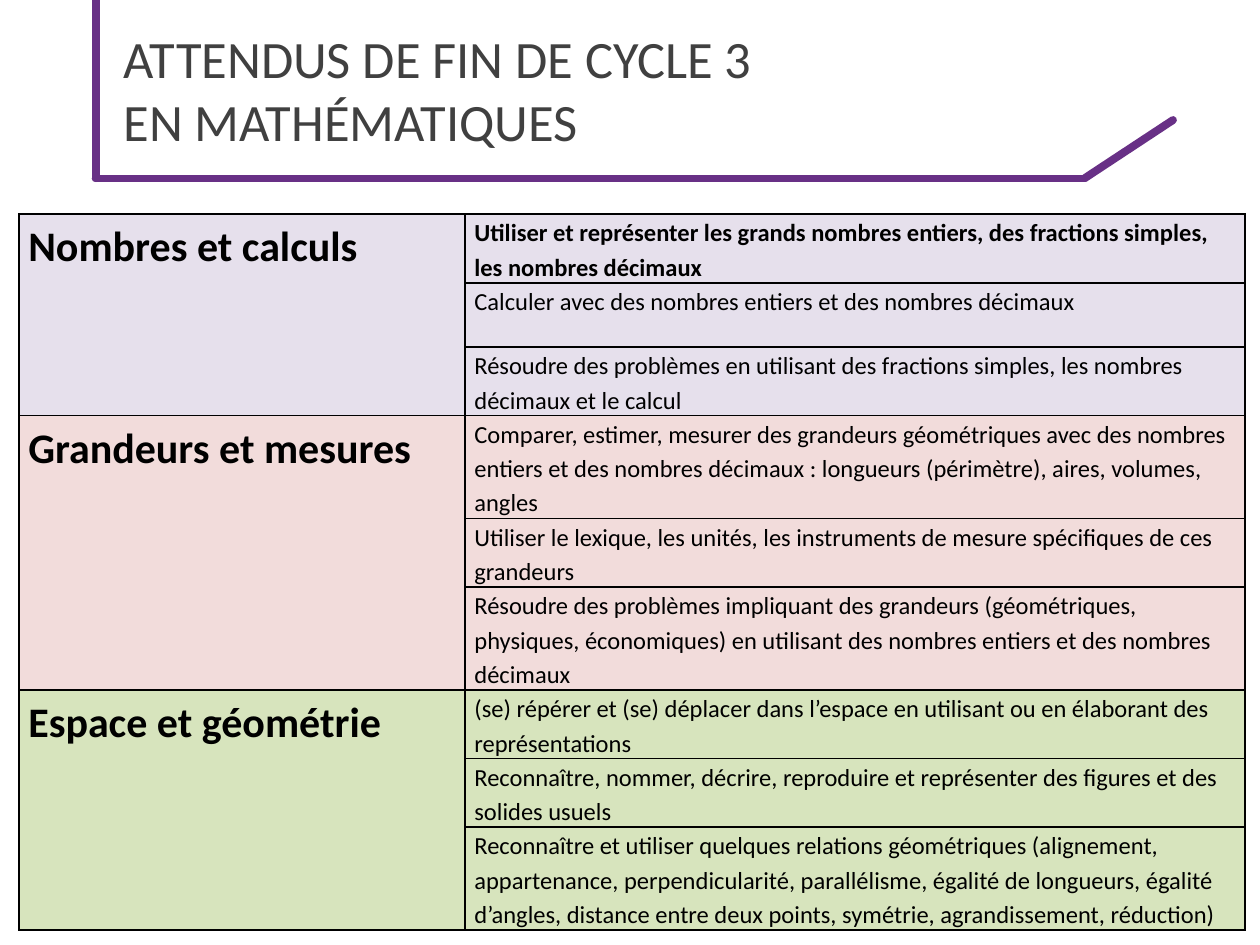
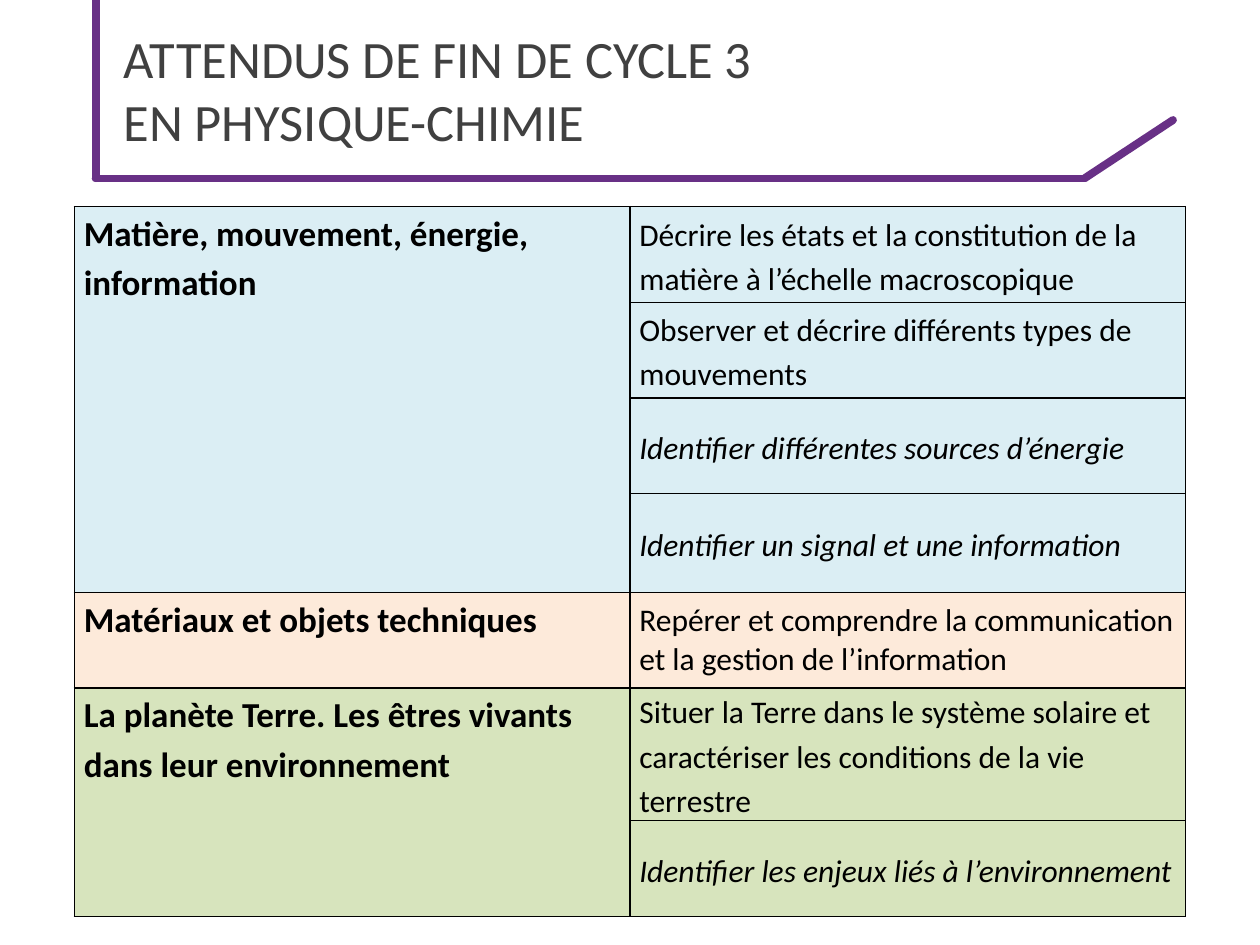
from dataclasses import dataclass

import pptx
import pptx.dml.color
import pptx.enum.shapes
import pptx.enum.text
import pptx.oxml
import pptx.oxml.ns
import pptx.util

Pt = pptx.util.Pt
MIDDLE = pptx.enum.text.MSO_ANCHOR.MIDDLE
TOP = pptx.enum.text.MSO_ANCHOR.TOP

FONT = "Calibri"
COLORS = {
    "frame": "683086",
    "title": "404040",
    "text": "000000",
    "lilac": "E6E0EC",
    "rose": "F2DCDB",
    "green": "D7E4BD",
    "blue": "DBEEF4",
    "peach": "FDEADA",
}


@dataclass
class Outcome:
    text: str
    bold: bool = False
    italic: bool = False
    spacing: float = 1.15


@dataclass
class TableStyle:
    left: float
    top: float
    widths: tuple
    row_heights: list
    theme_size: int
    outcome_size: int
    outcome_anchor: object


# Each theme: name, fill, expected outcomes
MATHS = [
    ("Nombres et calculs", "lilac", [
        Outcome("Utiliser et représenter les grands nombres entiers, des fractions "
                "simples, les nombres décimaux", bold=True),
        Outcome("Calculer avec des nombres entiers et des nombres décimaux"),
        Outcome("Résoudre des problèmes en utilisant des fractions simples, "
                "les nombres décimaux et le calcul"),
    ]),
    ("Grandeurs et mesures", "rose", [
        Outcome("Comparer, estimer, mesurer des grandeurs géométriques avec des nombres "
                "entiers et des nombres décimaux : longueurs (périmètre), aires, "
                "volumes, angles"),
        Outcome("Utiliser le lexique, les unités, les instruments de mesure "
                "spécifiques de ces grandeurs"),
        Outcome("Résoudre des problèmes impliquant des grandeurs (géométriques, "
                "physiques, économiques) en utilisant des nombres entiers et des "
                "nombres décimaux"),
    ]),
    ("Espace et géométrie", "green", [
        Outcome("(se) répérer et (se) déplacer dans l’espace en utilisant ou en "
                "élaborant des représentations"),
        Outcome("Reconnaître, nommer, décrire, reproduire et représenter des figures "
                "et des solides usuels"),
        Outcome("Reconnaître et utiliser quelques relations géométriques (alignement, "
                "appartenance, perpendicularité, parallélisme, égalité de longueurs, "
                "égalité d’angles, distance entre deux points, symétrie, "
                "agrandissement, réduction)"),
    ]),
]
PHYSICS = [
    ("Matière, mouvement, énergie, information", "blue", [
        Outcome("Décrire les états et la constitution de la matière à l’échelle "
                "macroscopique"),
        Outcome("Observer et décrire différents types de mouvements"),
        Outcome("Identifier différentes sources d’énergie", italic=True),
        Outcome("Identifier un signal et une information", italic=True),
    ]),
    ("Matériaux et objets techniques", "peach", [
        Outcome("Repérer et comprendre la communication et la gestion de "
                "l’information", spacing=1.0),
    ]),
    ("La planète Terre. Les êtres vivants dans leur environnement", "green", [
        Outcome("Situer la Terre dans le système solaire et caractériser les "
                "conditions de la vie terrestre"),
        Outcome("Identifier les enjeux liés à l’environnement", italic=True),
    ]),
]

MATHS_STYLE = TableStyle(10.8, 122.4, (254.9, 445.7), [36.7] * 3 + [54] + [36.7] * 5,
                         24, 14, TOP)
PHYSICS_STYLE = TableStyle(42.5, 118.1, (317.5, 317.5), [54.7] * 7, 20, 18, MIDDLE)


def rgb(name):
    return pptx.dml.color.RGBColor.from_string(COLORS[name])


def format_font(font, size, color, bold=False, italic=False):
    font.name = FONT
    font.size = Pt(size)
    font.bold = bold
    font.italic = italic
    font.color.rgb = rgb(color)


def add_frame_line(s, x1, y1, x2, y2):
    line = s.shapes.add_connector(pptx.enum.shapes.MSO_CONNECTOR.STRAIGHT,
                                  Pt(x1), Pt(y1), Pt(x2), Pt(y2))
    line.line.color.rgb = rgb("frame")
    line.line.width = Pt(4.5)
    line.line._get_or_add_ln().set("cap", "rnd")
    effects = pptx.oxml.parse_xml(f"<a:effectLst {pptx.oxml.ns.nsdecls('a')}/>")
    line.element.spPr.append(effects)
    return line


def set_up_layout(layout, s):
    """Place the title on the layout and move the frame, drawn on s, behind it."""
    title = layout.placeholders[0]
    title.left, title.top, title.width, title.height = Pt(63.4), Pt(0), Pt(620.6), Pt(101.5)
    for ends in [(54.7, 102, 619.9, 102),
                 (619.9, 101.8, 670.3, 68.6),
                 (54.7, 101.8, 54.7, 0)]:
        layout.shapes.element.append(add_frame_line(s, *ends).element)


def set_title(s, text):
    tf = s.shapes.title.text_frame
    tf.text = text
    tf.auto_size = pptx.enum.text.MSO_AUTO_SIZE.NONE
    tf.vertical_anchor = MIDDLE
    p = tf.paragraphs[0]
    p.alignment = pptx.enum.text.PP_ALIGN.LEFT
    for r in p.runs:
        format_font(r.font, 30, "title")


def style_cell(cell, fill):
    """Apply black one-point borders, tight margins and a solid fill."""
    tc_pr = cell._tc.get_or_add_tcPr()
    for side in "LRTB":
        tc_pr.append(pptx.oxml.parse_xml(
            f'<a:ln{side} {pptx.oxml.ns.nsdecls("a")} w="{Pt(1)}"><a:solidFill>'
            f'<a:srgbClr val="{COLORS["text"]}"/></a:solidFill></a:ln{side}>'))
    cell.fill.solid()
    cell.fill.fore_color.rgb = rgb(fill)
    cell.margin_left = cell.margin_right = Pt(5.4)
    cell.margin_top = cell.margin_bottom = 0


def write_cell(cell, outcome, size, anchor):
    cell.text_frame.text = outcome.text
    cell.vertical_anchor = anchor
    p = cell.text_frame.paragraphs[0]
    p.line_spacing = outcome.spacing
    format_font(p.runs[0].font, size, "text", outcome.bold, outcome.italic)


def add_outcome_table(s, themes, style):
    heights = style.row_heights
    frame = s.shapes.add_table(len(heights), 2, Pt(style.left), Pt(style.top),
                               Pt(sum(style.widths)), Pt(sum(heights)))
    table = frame.table
    table.first_row = table.horz_banding = False
    for column, width in zip(table.columns, style.widths):
        column.width = Pt(width)
    for row, height in zip(table.rows, heights):
        row.height = Pt(height)

    first = 0
    for theme, fill, outcomes in themes:
        for i, outcome in enumerate(outcomes, first):
            for col in range(2):
                style_cell(table.cell(i, col), fill)
            write_cell(table.cell(i, 1), outcome, style.outcome_size, style.outcome_anchor)
        theme_cell = table.cell(first, 0)
        write_cell(theme_cell, Outcome(theme, bold=True), style.theme_size, TOP)
        if len(outcomes) > 1:
            theme_cell.merge(table.cell(first + len(outcomes) - 1, 0))
        first += len(outcomes)


def main():
    prs = pptx.Presentation()
    prs.slide_width, prs.slide_height = Pt(720), Pt(540)
    layout = prs.slide_layouts[5]
    maths, physics = (prs.slides.add_slide(layout) for _ in range(2))
    set_up_layout(layout, maths)

    # The slides' titles take their place from the layout
    for s, subject, themes, style in [
        (maths, "MATHÉMATIQUES", MATHS, MATHS_STYLE),
        (physics, "PHYSIQUE-CHIMIE", PHYSICS, PHYSICS_STYLE),
    ]:
        set_title(s, f"ATTENDUS DE FIN DE CYCLE 3\vEN {subject}")
        add_outcome_table(s, themes, style)
    prs.save("out.pptx")


if __name__ == "__main__":
    main()
